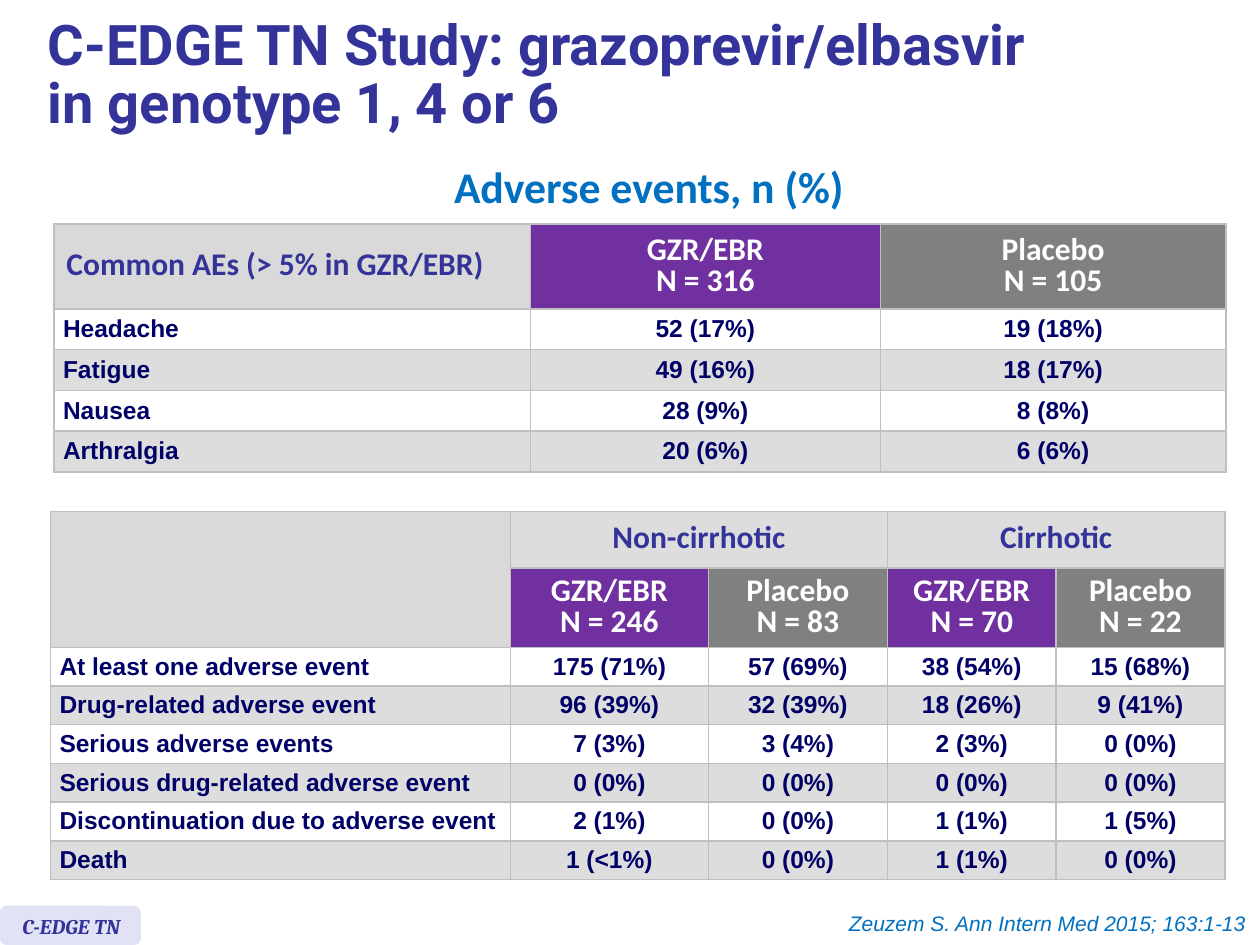
from lxml.etree import SubElement
from pptx import Presentation
from pptx.dml.color import RGBColor
from pptx.enum.shapes import MSO_SHAPE
from pptx.enum.text import MSO_ANCHOR, MSO_AUTO_SIZE, PP_ALIGN
from pptx.oxml.ns import qn
from pptx.util import Cm, Pt

INDIGO = RGBColor(0x33, 0x33, 0x99)
NAVY = RGBColor(0x00, 0x00, 0x66)
BLUE = RGBColor(0x00, 0x70, 0xC0)
PURPLE = RGBColor(0x70, 0x30, 0xA0)
GRAY = RGBColor(0x80, 0x80, 0x80)
CORNER_GRAY = RGBColor(0xD9, 0xD9, 0xD9)
BAND_GRAY = RGBColor(0xDD, 0xDD, 0xDD)
BORDER_GRAY = RGBColor(0xBF, 0xBF, 0xBF)
LAVENDER = RGBColor(0xE2, 0xE2, 0xF6)
WHITE = RGBColor(0xFF, 0xFF, 0xFF)

COMMON_EVENTS = [
    ("Headache", "52 (17%)", "19 (18%)"),
    ("Fatigue", "49 (16%)", "18 (17%)"),
    ("Nausea", "28 (9%)", "8 (8%)"),
    ("Arthralgia", "20 (6%)", "6 (6%)"),
]
EVENTS_BY_CIRRHOSIS = [
    ("At least one adverse event", "175 (71%)", "57 (69%)", "38 (54%)", "15 (68%)"),
    ("Drug-related adverse event", "96 (39%)", "32 (39%)", "18 (26%)", "9 (41%)"),
    ("Serious adverse events", "7 (3%)", "3 (4%)", "2 (3%)", "0 (0%)"),
    ("Serious drug-related adverse event", "0 (0%)", "0 (0%)", "0 (0%)", "0 (0%)"),
    ("Discontinuation due to adverse event", "2 (1%)", "0 (0%)", "1 (1%)", "1 (5%)"),
    ("Death", "1 (<1%)", "0 (0%)", "1 (1%)", "0 (0%)"),
]


def add_span(para, text, font, size, color, bold=True, italic=False):
    """Add one formatted run to a paragraph."""
    span = para.add_run()
    span.text = text
    span.font.name = font
    span.font.size = Pt(size)
    span.font.color.rgb = color
    span.font.bold = bold
    span.font.italic = italic


def add_text_box(shapes, left, top, width, height, align, wrap=True):
    """Add a text box and return its first paragraph."""
    box = shapes.add_textbox(left, top, width, height)
    box.text_frame.word_wrap = wrap
    box.text_frame.auto_size = MSO_AUTO_SIZE.SHAPE_TO_FIT_TEXT
    para = box.text_frame.paragraphs[0]
    para.alignment = align
    return para


def style_cell(cell, fill, side_margin=Cm(0.25)):
    """Give a cell its borders, fill, margins and anchor."""
    properties = cell._tc.get_or_add_tcPr()
    for side in ("a:lnL", "a:lnR", "a:lnT", "a:lnB"):
        line = SubElement(properties, qn(side), w=str(Pt(1)))
        solid = SubElement(line, qn("a:solidFill"))
        SubElement(solid, qn("a:srgbClr"), val=str(BORDER_GRAY))
    cell.fill.solid()
    cell.fill.fore_color.rgb = fill
    cell.vertical_anchor = MSO_ANCHOR.MIDDLE
    cell.margin_left = cell.margin_right = side_margin
    cell.margin_top = cell.margin_bottom = 0


def fill_header(cell, lines, color, fill, align=PP_ALIGN.CENTER):
    """Fill a header cell with one or more lines."""
    style_cell(cell, fill)
    para = cell.text_frame.paragraphs[0]
    para.alignment = align
    para.line_spacing = 0.8
    for index, line in enumerate(lines):
        if index:
            para.add_line_break()
        add_span(para, line, "Calibri", 18, color)


def fill_arms(table, row, counts):
    """Fill a header row with alternating treatment and placebo arms."""
    for index, count in enumerate(counts):
        name, fill = (("GZR/EBR", PURPLE), ("Placebo", GRAY))[index % 2]
        fill_header(table.cell(row, index + 1), (name, f"N = {count}"), WHITE, fill)


def fill_body(table, first_row, records):
    """Fill the banded data rows."""
    for index, record in enumerate(records):
        for column, text in enumerate(record):
            cell = table.cell(first_row + index, column)
            style_cell(cell, BAND_GRAY if index % 2 else WHITE, Cm(0.18))
            para = cell.text_frame.paragraphs[0]
            para.alignment = PP_ALIGN.CENTER if column else PP_ALIGN.LEFT
            add_span(para, text, "Arial", 14, NAVY)


def add_plain_table(page, left, top, widths, heights):
    """Add an unbanded table with the given column widths and row heights."""
    frame = page.shapes.add_table(
        len(heights), len(widths), left, top, sum(widths), sum(heights))
    table = frame.table
    table.first_row = table.horz_banding = False
    for column, width in zip(table.columns, widths):
        column.width = width
    for row, height in zip(table.rows, heights):
        row.height = height
    return table


def add_common_table(page, left, top):
    """Place the table of common adverse events."""
    heights = [Cm(1.71)] + [Cm(0.82)] * len(COMMON_EVENTS)
    table = add_plain_table(page, left, top, [Cm(9.6), Cm(7.06), Cm(6.96)], heights)
    fill_header(table.cell(0, 0), ("Common AEs (> 5% in GZR/EBR)",),
                INDIGO, CORNER_GRAY, PP_ALIGN.LEFT)
    fill_arms(table, 0, (316, 105))
    fill_body(table, 1, COMMON_EVENTS)


def add_cirrhosis_table(page, left, top):
    """Place the table of adverse events by cirrhosis status."""
    widths = [Cm(9.27), Cm(3.99), Cm(3.61), Cm(3.4), Cm(3.4)]
    heights = [Cm(1.14), Cm(1.6)] + [Cm(0.78)] * len(EVENTS_BY_CIRRHOSIS)
    table = add_plain_table(page, left, top, widths, heights)
    for row in range(2):
        style_cell(table.cell(row, 0), CORNER_GRAY)
    table.cell(0, 0).merge(table.cell(1, 0))
    for column, group in ((1, "Non-cirrhotic"), (3, "Cirrhotic")):
        fill_header(table.cell(0, column), (group,), INDIGO, BAND_GRAY)
        style_cell(table.cell(0, column + 1), BAND_GRAY)
        table.cell(0, column).merge(table.cell(0, column + 1))
    fill_arms(table, 1, (246, 83, 70, 22))
    fill_body(table, 2, EVENTS_BY_CIRRHOSIS)


def add_title(page, left, top, width, height):
    """Move the title placeholder and write its two lines."""
    box = page.shapes.title
    box.left, box.top, box.width, box.height = left, top, width, height
    frame = box.text_frame
    frame.word_wrap = True
    frame.auto_size = MSO_AUTO_SIZE.NONE
    frame.vertical_anchor = MSO_ANCHOR.MIDDLE
    lines = ("C-EDGE TN Study: grazoprevir/elbasvir", "in genotype 1, 4 or 6")
    for index, line in enumerate(lines):
        para = frame.add_paragraph() if index else frame.paragraphs[0]
        para.alignment = PP_ALIGN.LEFT
        para.line_spacing = 0.85
        para.space_before = Pt(0)
        add_span(para, line, "Roboto", 32, INDIGO)


def add_heading(page, left, top, width, height):
    """Place the heading above the tables."""
    para = add_text_box(page.shapes, left, top, width, height, PP_ALIGN.CENTER, False)
    para.line_spacing = Pt(23.6)
    add_span(para, "Adverse events, n (%)", "Calibri", 25, BLUE)


def add_study_tag(page, left, top, width, height):
    """Place the study tag as a group of badge and label."""
    group = page.shapes.add_group_shape()
    badge = group.shapes.add_shape(
        MSO_SHAPE.ROUNDED_RECTANGLE, left, top, width, height)
    badge.shadow.inherit = False
    badge.fill.solid()
    badge.fill.fore_color.rgb = LAVENDER
    badge.line.fill.background()
    para = add_text_box(group.shapes, left + Cm(0.2), top + Cm(0.03),
                        width + Cm(0.26), height - Cm(0.03), PP_ALIGN.LEFT)
    add_span(para, "C-EDGE TN", "Cambria", 12, INDIGO, italic=True)


def add_citation(page, left, top, width, height):
    """Place the right-aligned citation."""
    para = add_text_box(page.shapes, left, top, width, height, PP_ALIGN.RIGHT)
    add_span(para, "Zeuzem S. Ann Intern Med 2015; 163:1-13", "Arial", 12, BLUE,
             bold=False, italic=True)


def main():
    """Build and save the slide."""
    deck = Presentation()
    deck.slide_width, deck.slide_height = Cm(25.4), Cm(19.05)
    page = deck.slides.add_slide(deck.slide_layouts[5])
    add_study_tag(page, Cm(0), Cm(18.26), Cm(2.84), Cm(0.79))
    add_title(page, Cm(0.71), Cm(0.2), Cm(23.19), Cm(2.72))
    add_common_table(page, Cm(1.09), Cm(4.52))
    add_cirrhosis_table(page, Cm(1.02), Cm(10.31))
    add_heading(page, Cm(8.84), Cm(3.33), Cm(8.48), Cm(1.14))
    add_citation(page, Cm(12.7), Cm(18.24), Cm(12.67), Cm(0.76))
    deck.save("out.pptx")


if __name__ == "__main__":
    main()
